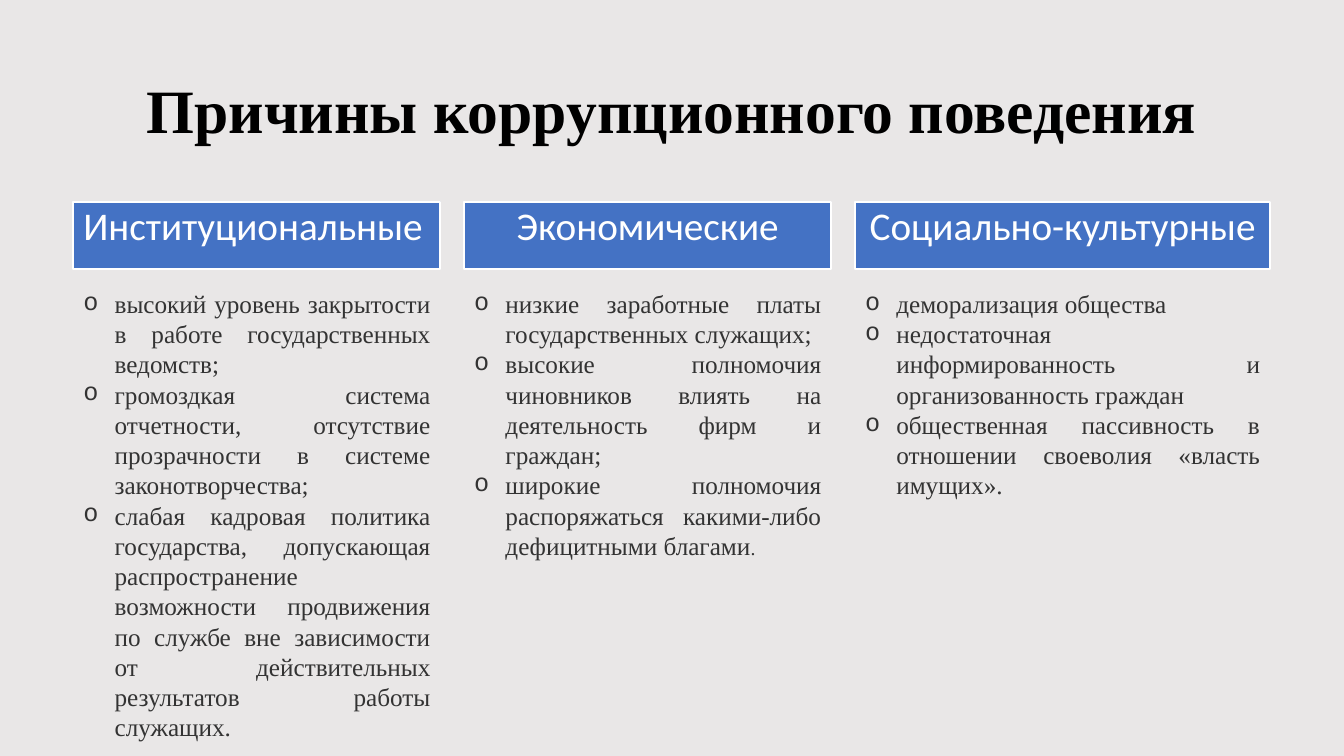
from lxml import etree
from pptx import Presentation
from pptx.dml.color import RGBColor
from pptx.enum.shapes import MSO_SHAPE
from pptx.enum.text import MSO_ANCHOR, MSO_AUTO_SIZE, PP_ALIGN
from pptx.oxml.ns import qn
from pptx.util import Cm, Pt

RECTANGLE = MSO_SHAPE.RECTANGLE
TOP, MIDDLE = MSO_ANCHOR.TOP, MSO_ANCHOR.MIDDLE
LEFT, CENTER, JUSTIFY = PP_ALIGN.LEFT, PP_ALIGN.CENTER, PP_ALIGN.JUSTIFY
FIT_SHAPE = MSO_AUTO_SIZE.SHAPE_TO_FIT_TEXT

BACKGROUND = RGBColor(0xE9, 0xE7, 0xE7)
BLUE = RGBColor(0x44, 0x72, 0xC4)
WHITE = RGBColor(0xFF, 0xFF, 0xFF)
BLACK = RGBColor(0x00, 0x00, 0x00)
GRAY = RGBColor(0x33, 0x33, 0x33)

SERIF = "Times New Roman"
SANS = "Calibri"
BULLET_FONT = "Courier New"

# Column layout in centimetres
COLUMNS_LEFT, COLUMN_GAP = 1.85, 0.6
HEADING_TOP, HEADING_HEIGHT = 5.08, 1.7
CAUSES_TOP = 7.14
INDENT = Cm(0.79)

# Heading, alignment, width, height of the list, causes
COLUMNS = [
    ("Институциональные", LEFT, 9.25, 11.79, [
        "высокий уровень закрытости в работе государственных ведомств;",
        "громоздкая система отчетности, отсутствие прозрачности в системе "
        "законотворчества;",
        "слабая кадровая политика государства, допускающая распространение "
        "возможности продвижения по службе вне зависимости от действительных "
        "результатов работы служащих.",
    ]),
    ("Экономические", CENTER, 9.25, 7.19, [
        "низкие заработные платы государственных служащих;",
        "высокие полномочия чиновников влиять на деятельность фирм и граждан;",
        "широкие полномочия распоряжаться какими-либо дефицитными благами",
    ]),
    ("Социально-культурные", CENTER, 10.46, 5.64, [
        "деморализация общества",
        "недостаточная информированность и организованность граждан",
        "общественная пассивность в отношении своеволия «власть имущих».",
    ]),
]


def format_runs(paragraph, font_name, size, color, bold=False):
    for run in paragraph.runs:
        run.font.name = font_name
        run.font.size = Pt(size)
        run.font.color.rgb = color
        run.font.bold = bold


def add_bullet(paragraph):
    properties = paragraph._p.get_or_add_pPr()
    properties.set("marL", str(INDENT))
    properties.set("indent", str(-INDENT))
    etree.SubElement(properties, qn("a:buFont"), typeface=BULLET_FONT)
    etree.SubElement(properties, qn("a:buChar"), char="o")


def add_title(slide, left, top, width, height):
    title = slide.shapes.add_textbox(left, top, width, height)
    text_frame = title.text_frame
    text_frame.word_wrap = True
    text_frame.vertical_anchor = MIDDLE
    text_frame.text = "Причины коррупционного поведения"
    paragraph = text_frame.paragraphs[0]
    paragraph.alignment = CENTER
    paragraph.line_spacing = 0.9
    format_runs(paragraph, SERIF, 44, BLACK, bold=True)


def add_heading(slide, left, top, width, height, text, alignment):
    heading = slide.shapes.add_shape(RECTANGLE, left, top, width, height)
    heading.shadow.inherit = False
    heading.fill.solid()
    heading.fill.fore_color.rgb = BLUE
    heading.line.color.rgb = WHITE
    heading.line.width = Pt(1.5)
    text_frame = heading.text_frame
    text_frame.word_wrap = True
    text_frame.vertical_anchor = TOP
    text_frame.text = text
    paragraph = text_frame.paragraphs[0]
    paragraph.alignment = alignment
    paragraph.line_spacing = 0.9
    paragraph.space_before = Pt(10)
    format_runs(paragraph, SANS, 28, WHITE)


def add_causes(slide, left, top, width, height, causes):
    text_frame = slide.shapes.add_textbox(left, top, width, height).text_frame
    text_frame.word_wrap = True
    text_frame.auto_size = FIT_SHAPE
    text_frame.text = "\n".join(causes)
    for paragraph in text_frame.paragraphs:
        paragraph.alignment = JUSTIFY
        add_bullet(paragraph)
        format_runs(paragraph, SERIF, 18, GRAY)
    return text_frame


def add_columns(slide):
    left = COLUMNS_LEFT
    for heading, alignment, width, height, causes in COLUMNS:
        add_heading(slide, Cm(left), Cm(HEADING_TOP), Cm(width),
                    Cm(HEADING_HEIGHT), heading, alignment)
        text_frame = add_causes(slide, Cm(left), Cm(CAUSES_TOP), Cm(width),
                                Cm(height), causes)
        # The economic list ends with a smaller full stop
        if heading == "Экономические":
            full_stop = text_frame.paragraphs[-1].add_run()
            full_stop.text = "."
            full_stop.font.name = SERIF
            full_stop.font.size = Pt(14)
            full_stop.font.color.rgb = GRAY
        left += width + COLUMN_GAP


def main():
    presentation = Presentation()
    presentation.slide_width = Cm(33.87)
    presentation.slide_height = Cm(19.05)
    slide = presentation.slides.add_slide(presentation.slide_layouts[6])
    slide.background.fill.solid()
    slide.background.fill.fore_color.rgb = BACKGROUND
    add_title(slide, Cm(2.33), Cm(1.01), Cm(29.21), Cm(3.68))
    add_columns(slide)
    presentation.save("out.pptx")


if __name__ == "__main__":
    main()
